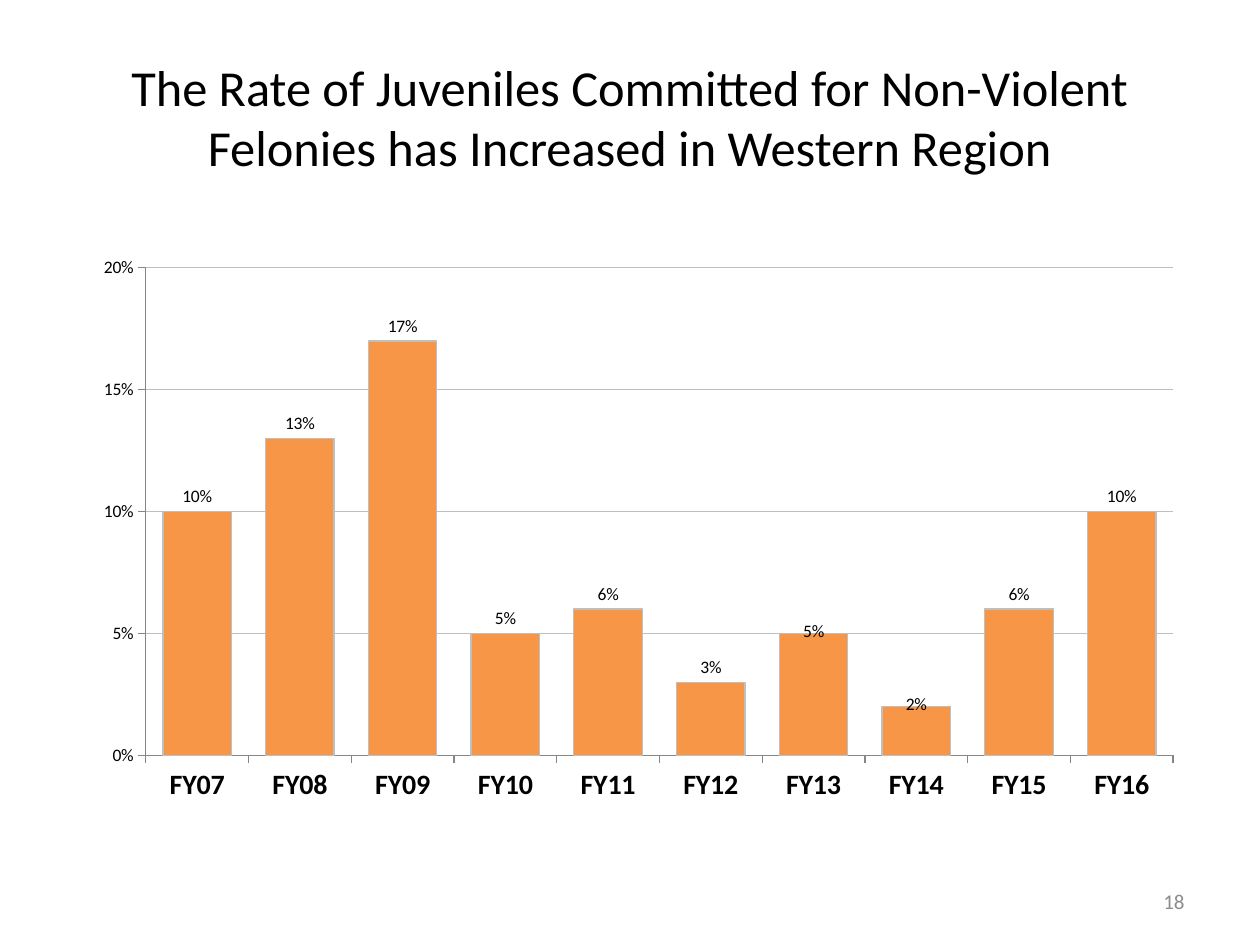
from lxml import etree
from pptx import Presentation
from pptx.chart.data import CategoryChartData
from pptx.dml.color import RGBColor
from pptx.enum.chart import XL_CHART_TYPE, XL_LABEL_POSITION, XL_TICK_MARK
from pptx.enum.text import MSO_ANCHOR, PP_ALIGN
from pptx.oxml.ns import qn
from pptx.util import Inches, Pt

COLUMN = XL_CHART_TYPE.COLUMN_CLUSTERED
OUTSIDE_END = XL_LABEL_POSITION.OUTSIDE_END
TICK_OUT, TICK_NONE = XL_TICK_MARK.OUTSIDE, XL_TICK_MARK.NONE
MIDDLE = MSO_ANCHOR.MIDDLE
CENTER, RIGHT = PP_ALIGN.CENTER, PP_ALIGN.RIGHT

THEME = {
    "font": "Calibri",
    "text": RGBColor(0x00, 0x00, 0x00),
    "muted": RGBColor(0x8C, 0x8C, 0x8C),
    "bar": RGBColor(0xF7, 0x96, 0x46),
    "grid": RGBColor(0xBF, 0xBF, 0xBF),
    "axis": RGBColor(0x86, 0x86, 0x86),
    "title_size": Pt(28.8),
    "category_size": Pt(16),
    "number_size": Pt(12),
    "chart_size": Pt(10),
    "line": Pt(0.75),
}
RATES = [0.10, 0.13, 0.17, 0.05, 0.06, 0.03, 0.05, 0.02, 0.06, 0.10]
LOWERED_LABELS = [6, 7]


def write(tf, text, size, color, align):
    tf.word_wrap = True
    tf.vertical_anchor = MIDDLE
    p = tf.paragraphs[0]
    p.alignment = align
    r = p.add_run()
    r.text = text
    r.font.name = THEME["font"]
    r.font.size = size
    r.font.color.rgb = color


def manual_layout(layout, **values):
    manual = etree.SubElement(layout, qn("c:manualLayout"))
    for name, value in values.items():
        etree.SubElement(manual, qn(f"c:{name}")).set("val", str(value))


prs = Presentation()
prs.slide_width, prs.slide_height = Inches(10), Inches(7.5)
s = prs.slides.add_slide(prs.slide_layouts[5])

title = s.shapes.title
title.left, title.top = Inches(0.5), Inches(0.3)
title.width, title.height = Inches(9), Inches(1.25)
write(title.text_frame,
      "The Rate of Juveniles Committed for Non-Violent Felonies has Increased in Western Region",
      THEME["title_size"], THEME["text"], CENTER)

data = CategoryChartData(number_format="0%")
data.categories = [f"FY{year:02d}" for year in range(7, 17)]
data.add_series("Series 1", RATES)
chart = s.shapes.add_chart(COLUMN, Inches(0.5), Inches(1.75), Inches(9), Inches(4.95), data).chart
chart.has_title = False
chart.has_legend = False
chart.font.name = THEME["font"]
chart.font.size = THEME["chart_size"]
chart.font.color.rgb = THEME["text"]

plot_area = chart.plots[0]._element.getparent()
layout = plot_area.find(qn("c:layout"))
if layout is None:
    layout = etree.Element(qn("c:layout"))
    plot_area.insert(0, layout)
manual_layout(layout, layoutTarget="inner", xMode="edge", yMode="edge",
              x=0.073, y=0.076, w=0.906, h=0.782)

for axis in (chart.category_axis, chart.value_axis):
    axis.major_tick_mark = TICK_OUT
    axis.minor_tick_mark = TICK_NONE
    axis.format.line.color.rgb = THEME["axis"]
    axis.format.line.width = THEME["line"]
chart.category_axis.tick_labels.font.size = THEME["category_size"]
chart.category_axis.tick_labels.font.bold = True

values = chart.value_axis
values.minimum_scale, values.maximum_scale, values.major_unit = 0, 0.2, 0.05
values.tick_labels.number_format = "0%"
values.tick_labels.number_format_is_linked = False
values.has_major_gridlines = True
values.major_gridlines.format.line.color.rgb = THEME["grid"]
values.major_gridlines.format.line.width = THEME["line"]

plot = chart.plots[0]
plot.gap_width = 50
plot.vary_by_categories = False
series = plot.series[0]
series.format.fill.solid()
series.format.fill.fore_color.rgb = THEME["bar"]
series.format.line.color.rgb = THEME["grid"]
series.format.line.width = THEME["line"]

labels = series.data_labels
labels.show_value = True
labels.number_format = "0%"
labels.number_format_is_linked = False
labels.position = OUTSIDE_END
for i in LOWERED_LABELS:
    series.points[i].data_label.position = OUTSIDE_END
for label in series._element.iter(qn("c:dLbl")):
    layout = etree.Element(qn("c:layout"))
    manual_layout(layout, x=0, y=0.02)
    label.find(qn("c:idx")).addnext(layout)

number = s.shapes.add_textbox(Inches(7.17), Inches(6.95), Inches(2.33), Inches(0.4))
write(number.text_frame, "18", THEME["number_size"], THEME["muted"], RIGHT)

prs.save("out.pptx")
